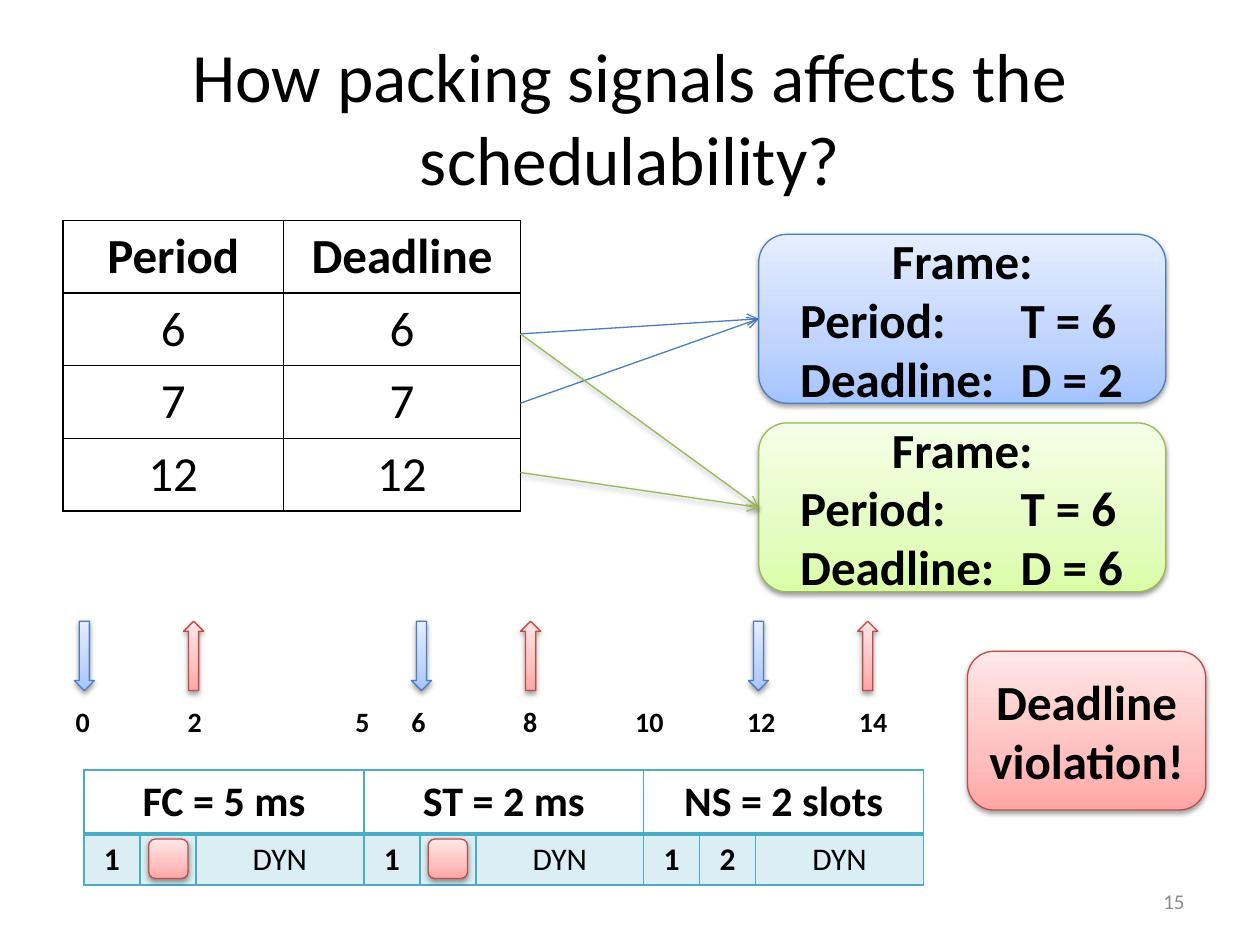
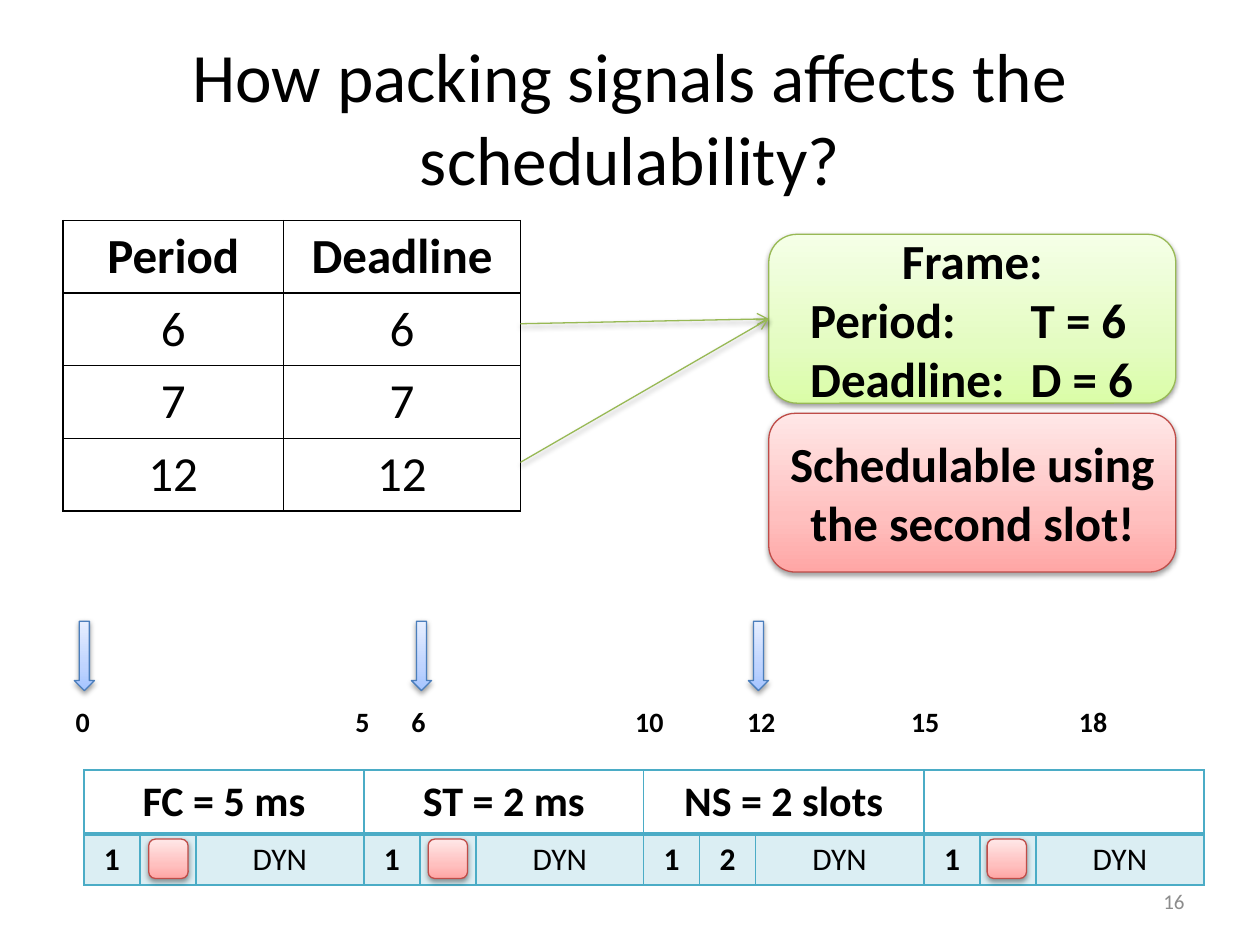
from lxml import etree
from pptx import Presentation
from pptx import util as u
from pptx.dml.color import RGBColor
from pptx.enum import shapes, text
from pptx.oxml.ns import qn

FONT = "Calibri"
TITLE = "How packing signals affects the schedulability?"
COLORS = {"black": "000000", "grey": "8C8C8C", "teal": "4BACC6"}
# Gradient stops from bottom to top, then the outline
PALETTES = {
    "blue": (("A4C4FF", "BFD4FF", "E6EEFF"), "4B7EBC"),
    "green": (("DAFDA7", "E4FCC2", "F5FFE7"), "98B955"),
    "red": (("FFA6A5", "FFC0BF", "FFE7E7"), "BF4C48"),
}
STOPS = (0, 35000, 100000)
CENTER = text.PP_ALIGN.CENTER
ROUNDED = shapes.MSO_SHAPE.ROUNDED_RECTANGLE

TICK = 32
SIGNALS_RIGHT = 297.4
CYCLE_LEFT, CYCLE_TOP, CYCLE_WIDTH = 48, 440, 160
RELEASE_LEFT, RELEASE_STEP, DEADLINE_OFFSET = 42.5, 192.6, 62.4


def points(*lengths):
    return [u.Pt(length) for length in lengths]


def add_element(parent, tag, **attributes):
    return etree.SubElement(parent, qn(tag), attributes)


def format_paragraph(paragraph, size, bold=False, color="black", align=CENTER):
    paragraph.alignment = align
    for run in paragraph.runs:
        run.font.name = FONT
        run.font.size = u.Pt(size)
        run.font.bold = bold
        run.font.color.rgb = RGBColor.from_string(COLORS[color])


def add_shadow(shape, visible=True):
    """Append the effect list; call it once the line is set."""
    effects = add_element(shape._element.spPr, "a:effectLst")
    if visible:
        shadow = add_element(effects, "a:outerShdw", blurRad=str(u.Pt(3.1)),
                             dist=str(u.Pt(1.6)), dir="5400000", rotWithShape="0")
        black = add_element(shadow, "a:srgbClr", val=COLORS["black"])
        add_element(black, "a:alpha", val="38000")


def set_line(shape, palette):
    shape.line.color.rgb = RGBColor.from_string(PALETTES[palette][1])
    shape.line.width = u.Pt(0.75)


def add_label(slide, box, words, size, color="black", align=CENTER):
    frame = slide.shapes.add_textbox(*points(*box)).text_frame
    frame.word_wrap = True
    frame.vertical_anchor = text.MSO_ANCHOR.MIDDLE
    frame.text = words
    format_paragraph(frame.paragraphs[0], size, color=color, align=align)


def add_glossy_shape(slide, kind, box, palette):
    shape = slide.shapes.add_shape(kind, *points(*box))
    shape.fill.gradient()
    shape.fill.gradient_angle = 90
    stops = shape._element.spPr.find(".//" + qn("a:gsLst"))
    stops.clear()
    for position, color in zip(STOPS, PALETTES[palette][0]):
        stop = add_element(stops, "a:gs", pos=str(position))
        add_element(stop, "a:srgbClr", val=color)
    set_line(shape, palette)
    add_shadow(shape)
    return shape


def add_callout(slide, box, palette, words, margin=5):
    frame = add_glossy_shape(slide, ROUNDED, box, palette).text_frame
    frame.word_wrap = True
    frame.vertical_anchor = text.MSO_ANCHOR.MIDDLE
    frame.margin_left = frame.margin_right = u.Pt(margin)
    frame.text = words
    for paragraph in frame.paragraphs:
        format_paragraph(paragraph, 28, bold=True)
    return frame


def add_frame_box(slide, left, top, palette, deadline):
    words = f"Frame:\nPeriod:\tT = 6\nDeadline:\tD = {deadline}"
    frame = add_callout(slide, (left, top, 232.6, 96.5), palette, words, margin=19)
    for paragraph in frame.paragraphs[1:]:
        paragraph.alignment = text.PP_ALIGN.LEFT
        tabs = add_element(paragraph._p.get_or_add_pPr(), "a:tabLst")
        add_element(tabs, "a:tab", pos=str(u.Pt(126)), algn="l")


def add_arrow(slide, start_y, end, palette, shadow=True):
    """Draw an arrow from the signal table to a frame box."""
    arrow = slide.shapes.add_connector(
        shapes.MSO_CONNECTOR.STRAIGHT, *points(SIGNALS_RIGHT, start_y, *end))
    set_line(arrow, palette)
    add_element(arrow._element.spPr.find(qn("a:ln")), "a:tailEnd", type="arrow")
    add_shadow(arrow, shadow)


def add_plain_table(slide, left, top, widths, heights):
    box = points(left, top, sum(widths), sum(heights))
    table = slide.shapes.add_table(len(heights), len(widths), *box).table
    table.first_row = table.horz_banding = False
    for column, width in zip(table.columns, widths):
        column.width = u.Pt(width)
    for row, height in zip(table.rows, heights):
        row.height = u.Pt(height)
    for cell in table.iter_cells():
        cell.fill.background()
    return table


def fill_cell(cell, words, size, bold=False, align=CENTER):
    cell.text = words
    format_paragraph(cell.text_frame.paragraphs[0], size, bold, align=align)


def set_borders(cell, color, top=1, bottom=1):
    properties = cell._tc.get_or_add_tcPr()
    widths = {"a:lnL": 1, "a:lnR": 1, "a:lnT": top, "a:lnB": bottom}
    for index, (tag, width) in enumerate(widths.items()):
        line = etree.Element(qn(tag), w=str(u.Pt(width)))
        solid = add_element(line, "a:solidFill")
        add_element(solid, "a:srgbClr", val=COLORS[color])
        properties.insert(index, line)


def add_signal_table(slide):
    rows = [("Period", "Deadline"), ("6", "6"), ("7", "7"), ("12", "12")]
    table = add_plain_table(slide, 36, 126, (126, 135.4), [41.5] * len(rows))
    for row, values in enumerate(rows):
        for column, value in enumerate(values):
            cell = table.cell(row, column)
            fill_cell(cell, value, 28, bold=row == 0)
            set_borders(cell, "black")


def add_cycle_table(slide, first_cycle, headings):
    """Draw one bus cycle per heading: two static slots and a dynamic segment."""
    left = CYCLE_LEFT + first_cycle * CYCLE_WIDTH
    widths = [TICK, TICK, 3 * TICK] * len(headings)
    table = add_plain_table(slide, left, CYCLE_TOP, widths, (36.6, 29.2))
    for column in range(len(widths)):
        set_borders(table.cell(0, column), "teal", bottom=2)
        slot = table.cell(1, column)
        name = ("1", "2", "DYN")[column % 3]
        fill_cell(slot, name, 18, bold=name != "DYN")
        set_borders(slot, "teal", top=2)
        slot.fill.solid()
        slot.fill.fore_color.rgb = RGBColor.from_string(COLORS["teal"])
        tint = slot._tc.tcPr.find(qn("a:solidFill")).find(qn("a:srgbClr"))
        add_element(tint, "a:alpha", val="20000")
    for cycle, heading in enumerate(headings):
        first = table.cell(0, 3 * cycle)
        first.merge(table.cell(0, 3 * cycle + 2))
        fill_cell(first, heading, 24, bold=True)


def add_time_axis(slide, left, ticks, start, times):
    table = add_plain_table(slide, left, 400, [TICK] * ticks, (29.2,))
    for time in times:
        fill_cell(table.cell(0, time - start), str(time), 16, bold=True,
                  align=text.PP_ALIGN.LEFT)


def add_timeline(slide, times, used_cycles, deadlines=False):
    for release in range(3):
        left = RELEASE_LEFT + release * RELEASE_STEP
        add_glossy_shape(slide, shapes.MSO_SHAPE.DOWN_ARROW, (left, 355, 11.5, 39.6), "blue")
        if deadlines:
            box = (left + DEADLINE_OFFSET, 355, 11.5, 39.6)
            add_glossy_shape(slide, shapes.MSO_SHAPE.UP_ARROW, box, "red")
    add_time_axis(slide, 36, 15, 0, times)
    add_cycle_table(slide, 0, ("FC = 5 ms", "ST = 2 ms", "NS = 2 slots"))
    if max(used_cycles) > 2:
        add_time_axis(slide, 513.4, 6, 15, (15, 18))
        add_cycle_table(slide, 3, ("",))
    for cycle in used_cycles:
        box = (85 + cycle * 159.7, 479.5, 22.5, 22.5)
        add_glossy_shape(slide, ROUNDED, box, "red")


def add_base_slide(presentation, number):
    slide = presentation.slides.add_slide(presentation.slide_layouts[6])
    add_label(slide, (36, 21.6, 648, 90), TITLE, 39.6)
    add_label(slide, (516, 500.5, 168, 28.8), str(number), 12, "grey", text.PP_ALIGN.RIGHT)
    add_signal_table(slide)
    return slide


def build_violation_slide(presentation):
    slide = add_base_slide(presentation, 15)
    left = 433.6
    for start_y in (190.8, 230.4):
        add_arrow(slide, start_y, (left, 182.2), "blue", shadow=False)
    add_frame_box(slide, left, 133.9, "blue", 2)
    add_frame_box(slide, left, 241.7, "green", 6)
    for start_y in (190.8, 270):
        add_arrow(slide, start_y, (left, 290), "green")
    add_timeline(slide, (0, 2, 5, 6, 8, 10, 12, 14), (0, 1), deadlines=True)
    add_callout(slide, (552.8, 372.2, 136.2, 90.7), "red", "Deadline violation!")


def build_schedulable_slide(presentation):
    slide = add_base_slide(presentation, 16)
    left = 439.3
    add_frame_box(slide, left, 133.9, "green", 6)
    for start_y in (185, 264.2):
        add_arrow(slide, start_y, (left, 182.2), "green")
    add_timeline(slide, (0, 5, 6, 10, 12), (0, 1, 3))
    add_callout(slide, (left, 236.2, 232.6, 90.7), "red", "Schedulable using the second slot!")


def main():
    presentation = Presentation()
    presentation.slide_width, presentation.slide_height = points(720, 540)
    build_violation_slide(presentation)
    build_schedulable_slide(presentation)
    presentation.save("out.pptx")


if __name__ == "__main__":
    main()
